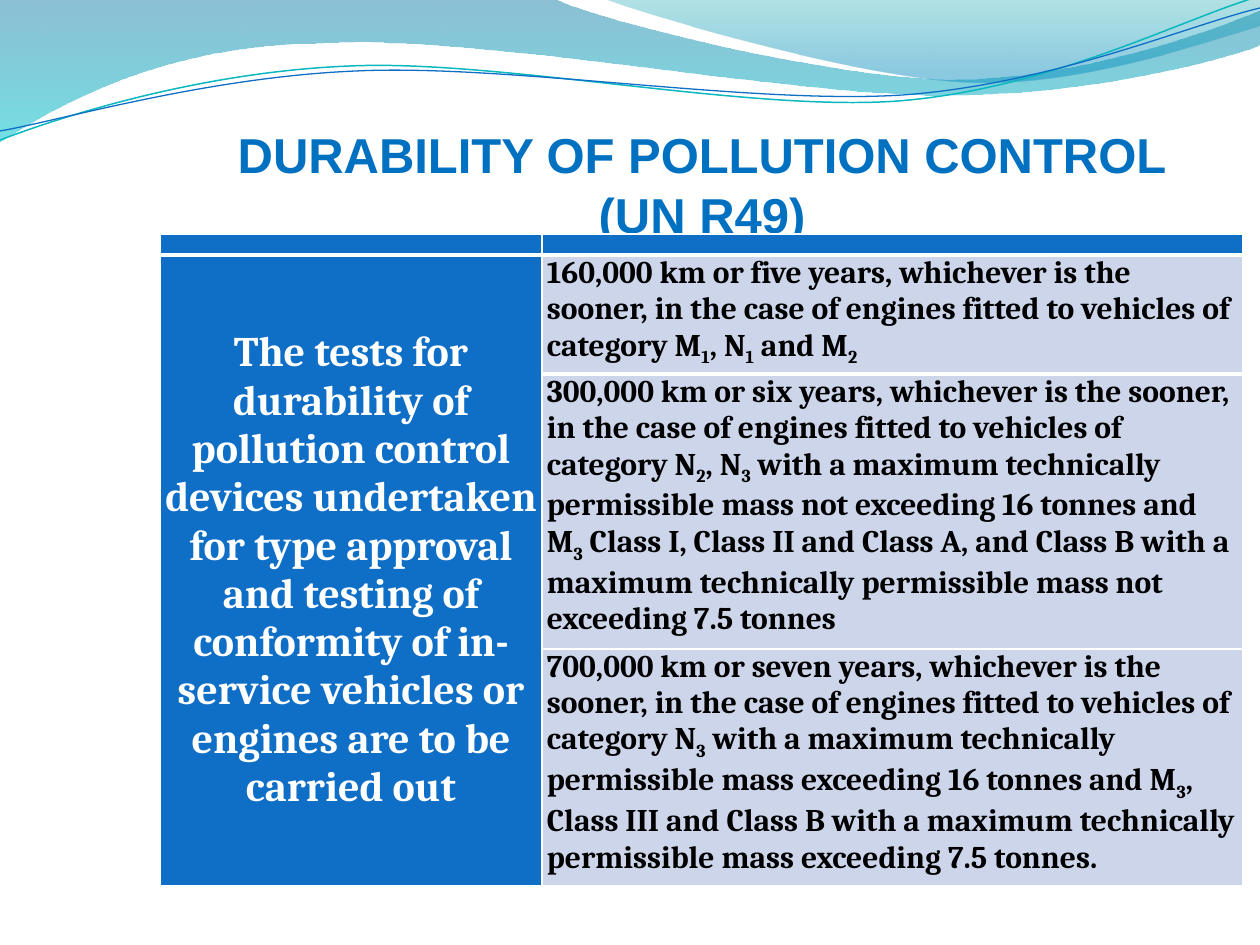
from lxml import etree
from pptx import Presentation
from pptx import util as u
from pptx.dml import color
from pptx.enum import text
from pptx.oxml import ns

PX = 914400 / 126

WIDE_WAVE = [
    (0, -1), (554, -1), (600, 21, 837, 79, 955, 79), (1075, 79, 1207, 33, 1260, 11),
    (1261, 45), (1239, 55, 1096, 96, 940, 95), (784, 95, 481, 35, 324, 43),
    (163, 44, 58, 105, -1, 142),
]
RIGHT_WAVE = [
    (604, -1), (641, 14, 859, 78, 969, 82), (1079, 87, 1211, 40, 1260, 26), (1260, 0),
]
TEAL_LINE = [
    (0, 140), (60, 117, 199, 72, 349, 66), (498, 59, 747, 112, 898, 101),
    (1050, 89, 1182, 19, 1257, -3),
]
BLUE_LINE = [
    (0, 131), (59, 121, 207, 77, 357, 71), (508, 64, 752, 105, 903, 95),
    (1053, 84, 1186, 26, 1260, 8),
]
TITLE = ["DURABILITY OF POLLUTION CONTROL", "(UN R49)"]
TESTS = (
    "The tests for durability of pollution control devices undertaken for type approval "
    "and testing of conformity of in-service vehicles or engines are to be carried out"
)
LIMITS = [
    "160,000 km or five years, whichever is the sooner, in the case of engines fitted to "
    "vehicles of category M_1_, N_1_ and M_2_",
    "300,000 km or six years, whichever is the sooner, in the case of engines fitted to "
    "vehicles of category N_2_, N_3_ with a maximum technically permissible mass not "
    "exceeding 16 tonnes and M_3_ Class I, Class II and Class A, and Class B with a "
    "maximum technically permissible mass not exceeding 7.5 tonnes",
    "700,000 km or seven years, whichever is the sooner, in the case of engines fitted to "
    "vehicles of category N_3_ with a maximum technically permissible mass exceeding 16 "
    "tonnes and M_3_, Class III and Class B with a maximum technically permissible mass "
    "exceeding 7.5 tonnes.",
]


def px(length):
    """Turn pixels into EMU."""
    return u.Emu(round(length * PX))


def rgb(value):
    """Turn a hex string into a colour."""
    return color.RGBColor.from_string(value)


def style(para, size, name, hue, align):
    """Set the bold font and the alignment of a paragraph."""
    para.alignment = align
    para.font.size = u.Pt(size)
    para.font.name = name
    para.font.bold = True
    para.font.color.rgb = rgb(hue)


def add_outline(page, outline, close):
    """Draw corners and cubic curves as a freeform without shadow."""
    points = [
        (px(piece[i]), px(piece[i + 1])) for piece in outline for i in range(0, len(piece), 2)
    ]
    builder = page.shapes.build_freeform(*points[0])
    builder.add_line_segments(points[1:], close=close)
    shape = builder.convert_to_shape()
    shape.shadow.inherit = False
    segments = iter(list(shape._element.iter(ns.qn("a:lnTo"))))
    for piece in outline[1:]:
        first = next(segments)
        if len(piece) == 6:
            first.addprevious(curve := etree.Element(ns.qn("a:cubicBezTo")))
            for segment in (first, next(segments), next(segments)):
                curve.append(segment[0])
                segment.getparent().remove(segment)
    return shape


def add_wave(page, outline, stops):
    """Add a translucent wave shaded from top to bottom."""
    wave = add_outline(page, outline, True)
    wave.line.fill.background()
    wave.fill.gradient()
    wave.fill.gradient_angle = 270
    for stop, (position, hue, _) in zip(wave.fill.gradient_stops, stops):
        stop.position = position
        stop.color.rgb = rgb(hue)
    for node, (_, _, alpha) in zip(wave._element.iter(ns.qn("a:gs")), stops):
        etree.SubElement(node[0], ns.qn("a:alpha"), val=str(alpha * 1000))


def add_curve(page, outline, hue, width):
    """Add a thin open curve."""
    curve = add_outline(page, outline, False)
    curve.fill.background()
    curve.line.color.rgb = rgb(hue)
    curve.line.width = u.Pt(width)


def add_title(page, left, top, width, height):
    """Add the two centred title lines."""
    frame = page.shapes.add_textbox(px(left), px(top), px(width), px(height)).text_frame
    frame.word_wrap = True
    for index, line in enumerate(TITLE):
        para = frame.add_paragraph() if index else frame.paragraphs[0]
        para.add_run().text = line
        style(para, 28, "Arial", "0070C0", text.PP_ALIGN.CENTER)
        if index:
            para.space_before = u.Pt(1)


def fill_cell(cell, words, size, hue, align):
    """Write words in a cell, with subscripts between underscores."""
    para = cell.text_frame.paragraphs[0]
    for index, part in enumerate(words.split("_")):
        if part:
            span = para.add_run()
            span.text = part
            if index % 2:
                span.font._element.set("baseline", "-25000")
    style(para, size, "Cambria", hue, align)


def add_edge(cell, side, width):
    """Draw a white border on one side of a cell."""
    edge = etree.Element(ns.qn(f"a:{side}"), w=str(u.Pt(width)))
    fill = etree.SubElement(edge, ns.qn("a:solidFill"))
    etree.SubElement(fill, ns.qn("a:srgbClr"), val="FFFFFF")
    cell._tc.get_or_add_tcPr().insert(0, edge)


def add_limits(page, left, top, columns, rows):
    """Add the table of durability limits."""
    table = page.shapes.add_table(
        len(rows), len(columns), px(left), px(top), px(sum(columns)), px(sum(rows))
    ).table
    for column, width in zip(table.columns, columns):
        column.width = px(width)
    for row, height in zip(table.rows, rows):
        row.height = px(height)
    for row in range(len(rows)):
        for column in range(len(columns)):
            cell = table.cell(row, column)
            cell.margin_left = cell.margin_right = px(5)
            cell.margin_top = cell.margin_bottom = 0
            cell.fill.solid()
            cell.fill.fore_color.rgb = rgb("CCD5EA" if row and column else "0F6FC6")
            if row == 0:
                para = cell.text_frame.paragraphs[0]
                etree.SubElement(para._p, ns.qn("a:endParaRPr"), sz="800")
                add_edge(cell, "lnB", 3)
            elif row == 1:
                add_edge(cell, "lnT", 3)
    tests = table.cell(1, 0)
    tests.merge(table.cell(len(rows) - 1, 0))
    tests.vertical_anchor = text.MSO_ANCHOR.MIDDLE
    fill_cell(tests, TESTS, 24, "FFFFFF", text.PP_ALIGN.CENTER)
    for row, limit in enumerate(LIMITS, 1):
        fill_cell(table.cell(row, 1), limit, 18, "000000", text.PP_ALIGN.LEFT)


def main():
    """Build the durability slide."""
    deck = Presentation()
    deck.slide_width, deck.slide_height = px(1260), px(945)
    page = deck.slides.add_slide(deck.slide_layouts[6])
    add_wave(page, WIDE_WAVE, [(0, "0074A1", 45), (1, "00C6CF", 55)])
    add_wave(page, RIGHT_WAVE, [(0, "00A1A9", 30), (0.8, "008BBF", 45)])
    add_curve(page, TEAL_LINE, "0AB8BF", 0.85)
    add_curve(page, BLUE_LINE, "0F6FC6", 0.75)
    add_title(page, 144, 118, 1116, 131)
    add_limits(page, 160, 234, [382, 701], [21, 119, 275, 236])
    deck.save("out.pptx")


if __name__ == "__main__":
    main()
